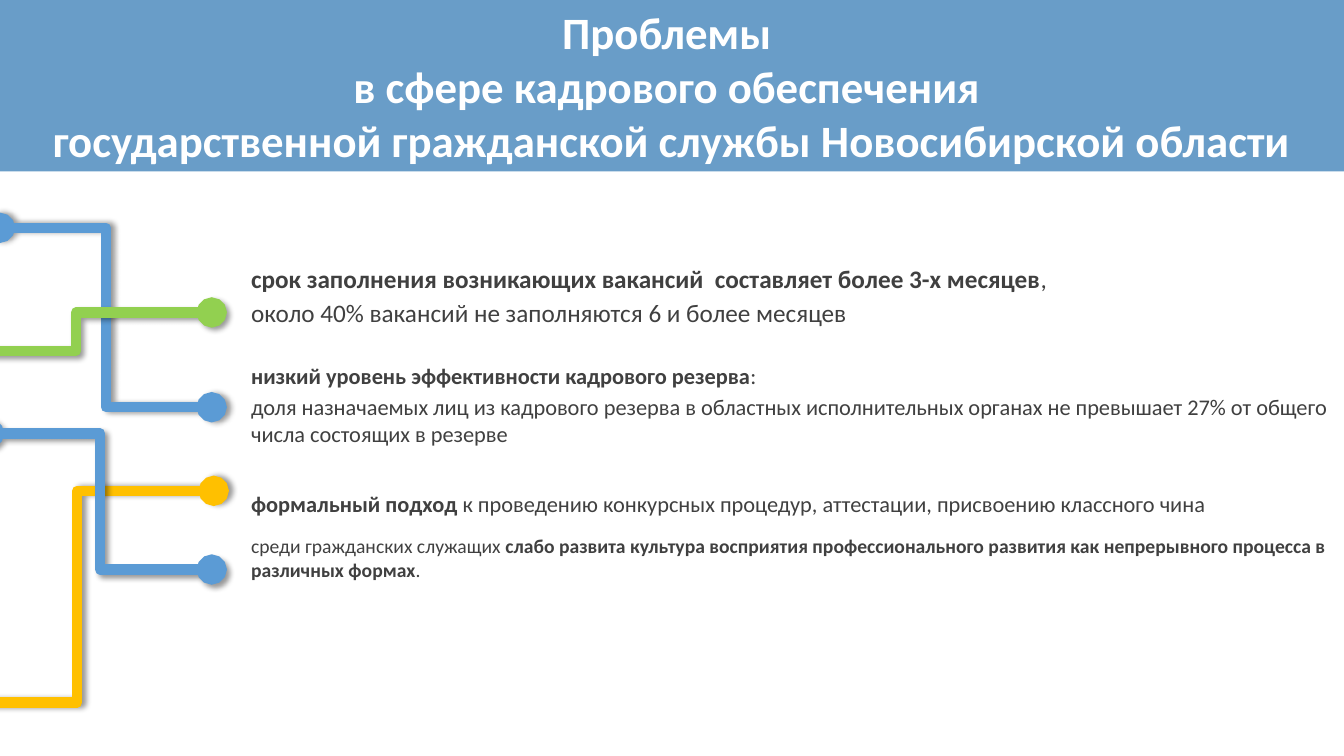
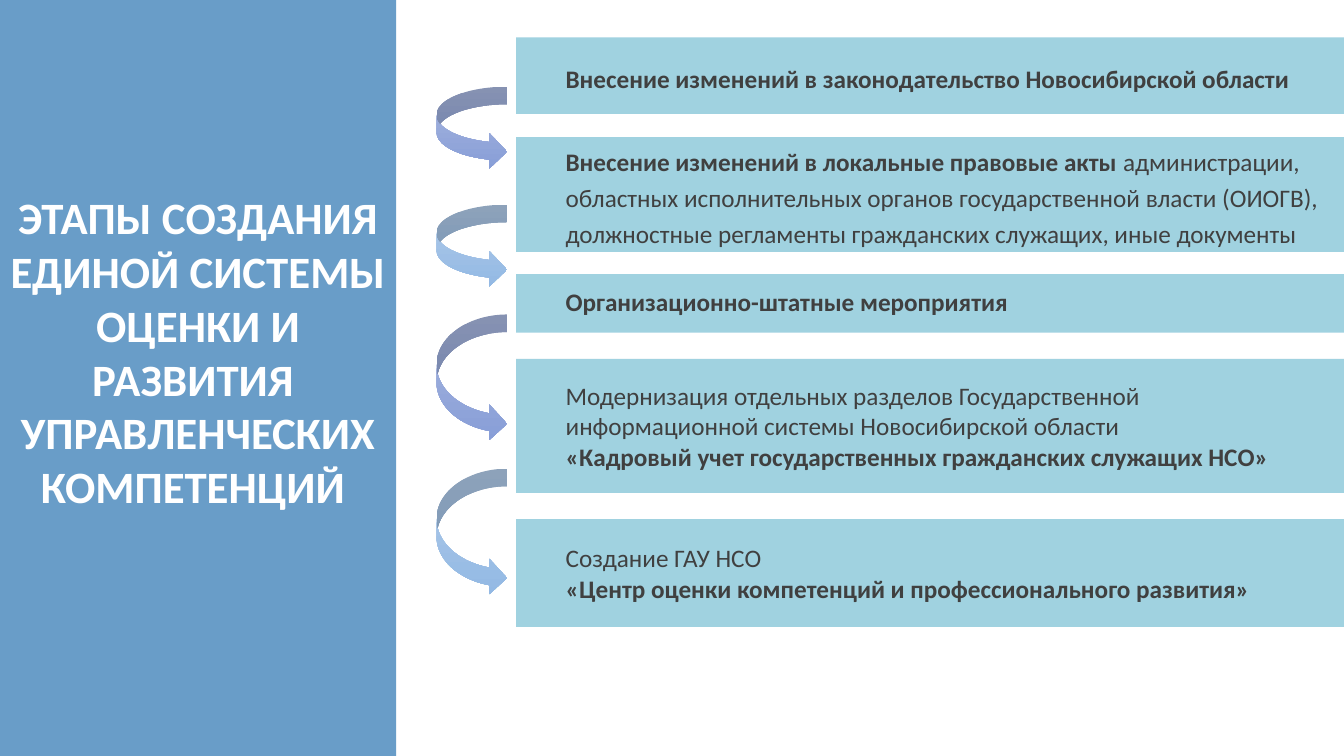
"""Build two slides on staffing problems and the stages of a competency system."""
from lxml.etree import SubElement
from pptx import Presentation
from pptx.dml.color import RGBColor
from pptx.enum.shapes import MSO_CONNECTOR, MSO_SHAPE
from pptx.enum.text import MSO_ANCHOR, PP_ALIGN
from pptx.oxml.ns import qn
from pptx.util import Pt

PX = 9144
WIDTH, HEIGHT = 1333, 750
FONT = "Calibri"
BAND, BAND_OPACITY = "3078B3", 72
STAGE_FILL, STAGE_OPACITY = "79BFD4", 70
PANEL_OPACITY = 61
WHITE, TEXT = "FFFFFF", "404040"
BLUE, GREEN, AMBER = "5B9BD5", "92D050", "FFC000"
INSET = 10

PROBLEMS_TITLE = [
    "Проблемы ",
    "в сфере кадрового обеспечения ",
    "государственной гражданской службы Новосибирской области",
]
STAGES_TITLE = [
    "ЭТАПЫ СОЗДАНИЯ ЕДИНОЙ СИСТЕМЫ ОЦЕНКИ И РАЗВИТИЯ ",
    "УПРАВЛЕНЧЕСКИХ КОМПЕТЕНЦИЙ ",
]

PROBLEM_LEFT, PROBLEM_WIDTH = 219, 1111
PROBLEMS = [
    dict(top=256, height=84, size=18, paragraphs=[
        [("срок заполнения возникающих вакансий  составляет более 3-х месяцев", True),
         (",", False)],
        [("около 40% вакансий не заполняются 6 и более месяцев", False)],
    ]),
    dict(top=354, height=94, size=16, paragraphs=[
        [("низкий уровень эффективности кадрового резерва", True), (":", False)],
        [("доля назначаемых лиц из кадрового резерва в областных исполнительных "
          "органах не превышает 27% от общего числа состоящих в резерве", False)],
    ]),
    dict(top=471, height=52, size=16, paragraphs=[
        [("формальный подход ", True),
         ("к проведению конкурсных процедур, аттестации, "
          "присвоению классного чина", False)],
    ]),
    dict(top=525, height=59, size=14, paragraphs=[
        [("среди гражданских служащих ", False),
         ("слабо развита культура восприятия профессионального развития "
          "как непрерывного процесса в различных формах", True),
         (".", False)],
    ]),
]

BRANCHES = [
    ((0, 226), (210, 404), BLUE, 0),
    ((-59, 348), (210, 310), GREEN, 45),
    ((-59, 697), (212, 487), AMBER, 0),
    ((-11, 430), (210, 565), BLUE, 45),
]

STAGE_LEFT = 512
STAGES = [
    dict(top=37, height=76, spacing=1.2, right=INSET, paragraphs=[
        [("Внесение изменений в законодательство Новосибирской области", True)],
    ]),
    dict(top=136, height=114, spacing=1.2, right=INSET, paragraphs=[
        [("Внесение изменений в локальные правовые акты", True),
         (" администрации, областных исполнительных органов государственной "
          "власти (ОИОГВ), должностные регламенты гражданских служащих, "
          "иные документы", False)],
    ]),
    dict(top=272, height=58, spacing=0.9, right=INSET, paragraphs=[
        [("Организационно-штатные мероприятия", True)],
    ]),
    dict(top=356, height=133, spacing=1.0, right=60, paragraphs=[
        [("Модернизация отдельных разделов Государственной "
          "информационной системы Новосибирской области", False)],
        [("«Кадровый учет государственных гражданских служащих НСО»", True)],
    ]),
    dict(top=515, height=107, spacing=1.0, right=INSET, paragraphs=[
        [("Создание ГАУ НСО", False)],
        [("«Центр оценки компетенций и профессионального развития»", True)],
    ]),
]

ARROW_LEFT, ARROW_WIDTH = 433, 70
ARROW_GRADIENTS = [("A8B7DF", "889ED7"), ("B1CBE9", "93B9E4")]
ARROWS = [(86, 82), (203, 82), (312, 126), (465, 126)]


def color(value):
    return RGBColor.from_string(value)


def px(*lengths):
    return [round(length * PX) for length in lengths]


def add_plain_shape(page, kind, left, top, width, height):
    shape = page.shapes.add_shape(kind, *px(left, top, width, height))
    shape.shadow.inherit = False
    shape.line.fill.background()
    return shape


def add_box(page, bounds, fill, opacity):
    box = add_plain_shape(page, MSO_SHAPE.RECTANGLE, *bounds)
    box.fill.solid()
    box.fill.fore_color.rgb = color(fill)
    tint = box.fill._xPr.find(qn("a:solidFill"))[0]
    SubElement(tint, qn("a:alpha")).set("val", str(opacity * 1000))
    return box


def write_text(box, paragraphs, size, ink=TEXT, align=PP_ALIGN.LEFT,
               anchor=MSO_ANCHOR.MIDDLE, margins=(INSET, 5, INSET, 5),
               gap=0, spacing=1.0):
    frame = box.text_frame
    frame.word_wrap = True
    frame.vertical_anchor = anchor
    (frame.margin_left, frame.margin_top,
     frame.margin_right, frame.margin_bottom) = px(*margins)
    for index, spans in enumerate(paragraphs):
        para = frame.add_paragraph() if index else frame.paragraphs[0]
        para.alignment = align
        para.line_spacing = spacing
        para.space_before = Pt(gap if index else 0)
        for text, bold in spans:
            span = para.add_run()
            span.text = text
            span.font.name = FONT
            span.font.size = Pt(size)
            span.font.bold = bold
            span.font.color.rgb = color(ink)


def add_title_band(page, width, height, lines, bottom=5):
    band = add_box(page, (0, 0, width, height), BAND, BAND_OPACITY)
    write_text(band, [[(line, True)] for line in lines], 32, WHITE,
               PP_ALIGN.CENTER, margins=(INSET, 5, INSET, bottom))


def add_branch(page, start, end, ink, shadow_angle):
    branch = page.shapes.add_connector(MSO_CONNECTOR.ELBOW, *px(*start, *end))
    branch.line.width = Pt(7.25)
    branch.line.color.rgb = color(ink)
    outline = branch.line._get_or_add_ln()
    for end_name in ("a:headEnd", "a:tailEnd"):
        SubElement(outline, qn(end_name)).set("type", "oval")
    effects = SubElement(branch._element.spPr, qn("a:effectLst"))
    shadow = SubElement(effects, qn("a:outerShdw"), blurRad=str(Pt(4)),
                        dist=str(Pt(3)), dir=str(shadow_angle * 60000))
    tint = SubElement(shadow, qn("a:srgbClr"), val="000000")
    SubElement(tint, qn("a:alpha"), val="40000")


def add_stage_arrow(page, top, height, gradient):
    arrow = add_plain_shape(page, MSO_SHAPE.CURVED_RIGHT_ARROW,
                            ARROW_LEFT, top, ARROW_WIDTH, height)
    arrow.fill.gradient()
    arrow.fill.gradient_angle = 270
    for stop, ink in zip(arrow.fill.gradient_stops, gradient):
        stop.color.rgb = color(ink)


def build_problems(page):
    add_title_band(page, WIDTH, 170, PROBLEMS_TITLE)
    for problem in PROBLEMS:
        panel = add_box(page, (PROBLEM_LEFT, problem["top"], PROBLEM_WIDTH,
                               problem["height"]), WHITE, PANEL_OPACITY)
        single = len(problem["paragraphs"]) == 1 and problem["size"] == 16
        write_text(panel, problem["paragraphs"], problem["size"], gap=3,
                   anchor=MSO_ANCHOR.MIDDLE if single else MSO_ANCHOR.TOP,
                   margins=(30, 11 if single else 5, INSET, 5))
    for branch in BRANCHES:
        add_branch(page, *branch)


def build_stages(page):
    for stage in STAGES:
        box = add_box(page, (STAGE_LEFT, stage["top"], WIDTH - STAGE_LEFT,
                             stage["height"]), STAGE_FILL, STAGE_OPACITY)
        write_text(box, stage["paragraphs"], 18, spacing=stage["spacing"],
                   margins=(49, 5, stage["right"], 5))
    add_title_band(page, 393, HEIGHT, STAGES_TITLE, bottom=58)
    for index, (top, height) in enumerate(ARROWS):
        add_stage_arrow(page, top, height, ARROW_GRADIENTS[index % 2])


def main():
    deck = Presentation()
    deck.slide_width, deck.slide_height = px(WIDTH, HEIGHT)
    for build in (build_problems, build_stages):
        build(deck.slides.add_slide(deck.slide_layouts[6]))
    deck.save("out.pptx")


if __name__ == "__main__":
    main()
